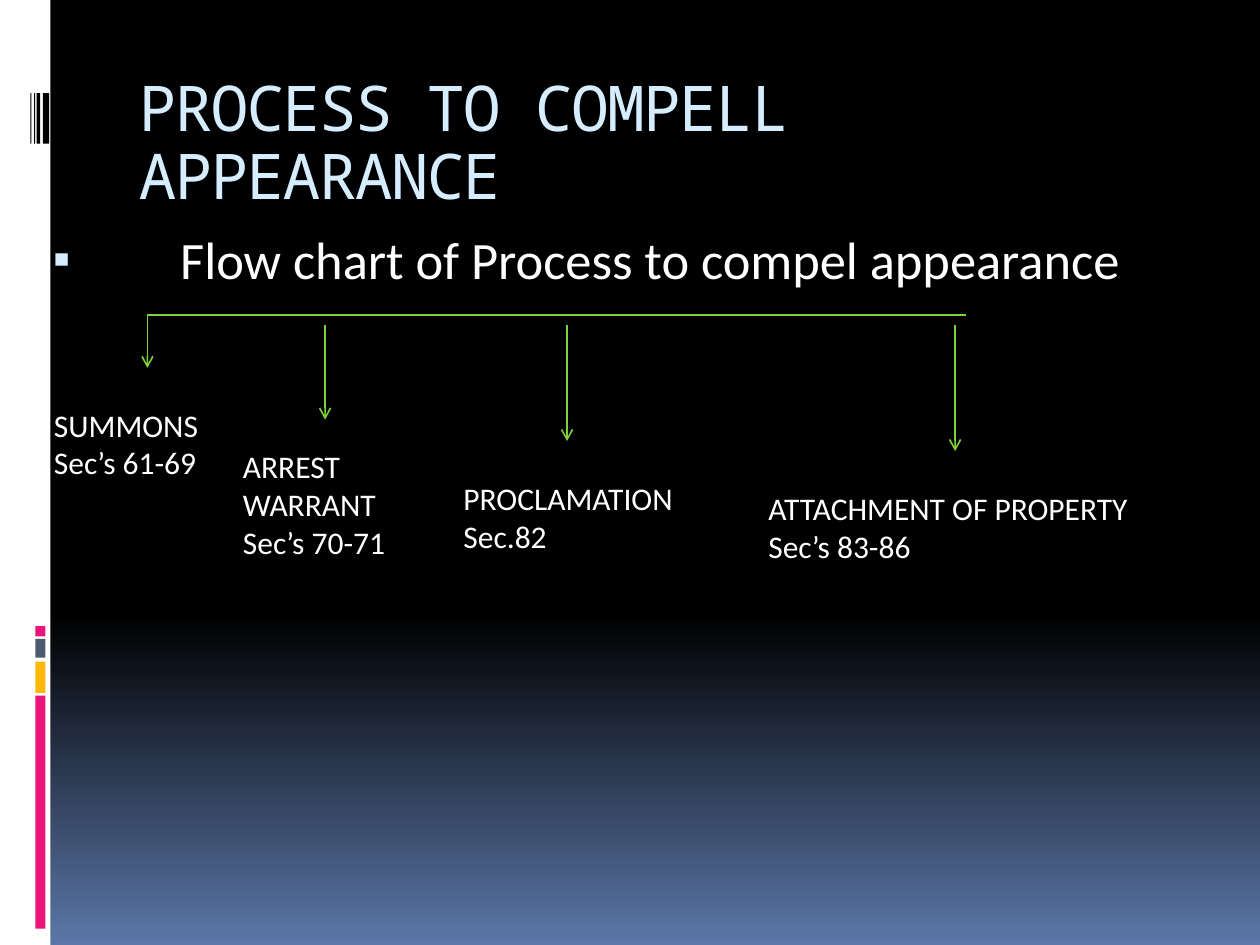
import pptx
import pptx.dml.color
import pptx.enum.shapes
import pptx.enum.text
import pptx.oxml
import pptx.oxml.ns
import pptx.util

Inches, Pt = pptx.util.Inches, pptx.util.Pt
qn = pptx.oxml.ns.qn

COLORS = {"black": "000000", "white": "FFFFFF", "sky": "D6ECFF", "blue": "5B77A8",
          "pink": "EA157A", "amber": "FEB80A", "slate": "4E5B6F", "green": "7FD13B"}
TITLE = "PROCESS TO COMPELL APPEARANCE"
HEADING = "Flow chart of Process to compel appearance"
TITLE_FORMAT = {"name": "Noto Sans Mono", "size": Pt(36), "bold": False}
HEADING_FORMAT = {"name": "Calibri", "size": Pt(30)}
LABEL_FORMAT = {"name": "Calibri", "size": Pt(18)}

# Side strip: (left, top, width, height, color)
STRIP = [(0, 0, 0.4, 7.5, "white")]
STRIP += [(0.28, top, 0.08, height, color) for top, height, color in
          [(5.52, 1.85, "pink"), (5.25, 0.25, "amber"),
           (5.07, 0.15, "slate"), (4.97, 0.08, "pink")]]
STRIP += [(left, 0.74, width, 0.4, "black") for left, width in
          [(0.34, 0.05), (0.29, 0.03), (0.27, 0.01), (0.24, 0.01)]]

# Flow chart branches: arrow (x, top, bottom), label (left, top, width, height), lines
BRANCHES = [
    ((1.17, 2.5, 2.92), (0.33, 3.17, 1.42, 0.71), ["SUMMONS", "Sec’s 61-69"]),
    ((2.58, 2.58, 3.33), (1.83, 3.5, 1.5, 1.01), ["ARREST WARRANT", "Sec’s 70-71"]),
    ((4.5, 2.58, 3.5), (3.58, 3.75, 2, 0.71), ["PROCLAMATION Sec.82"]),
    ((7.58, 2.58, 3.58), (6, 3.83, 3.25, 0.71),
     ["ATTACHMENT OF PROPERTY", "Sec’s 83-86"]),
]
RAIL = (1.17, 2.5, 7.67, 2.5)


def rgb(name):
    return pptx.dml.color.RGBColor.from_string(COLORS[name])


def place(shape, left, top, width, height):
    for name, value in {"left": left, "top": top, "width": width, "height": height}.items():
        setattr(shape, name, Inches(value))


def write(para, text, font_format, color):
    span = para.add_run()
    span.text = text
    for name, value in font_format.items():
        setattr(span.font, name, value)
    span.font.color.rgb = rgb(color)
    return span


def add_child(parent, tag, **attributes):
    child = pptx.oxml.parse_xml(f"<{tag} {pptx.oxml.ns.nsdecls('a')}/>")
    for name, value in attributes.items():
        child.set(name, value)
    parent.append(child)
    return child


def paint_background(page):
    fill = page.background.fill
    fill.gradient()
    fill.gradient_angle = 270
    for stop, (position, color) in zip(fill.gradient_stops, [(0.65, "black"), (1, "blue")]):
        stop.position = position
        stop.color.rgb = rgb(color)


def add_strip(page):
    for *bounds, color in STRIP:
        bar = page.shapes.add_shape(pptx.enum.shapes.MSO_SHAPE.RECTANGLE,
                                    *map(Inches, bounds))
        bar.shadow.inherit = False
        bar.fill.solid()
        bar.fill.fore_color.rgb = rgb(color)
        bar.line.fill.background()


def add_title(page):
    title = page.shapes.title
    place(title, 1, 0.56, 8.5, 1)
    frame = title.text_frame
    frame.word_wrap = True
    frame.margin_right = Inches(0.3)
    frame.vertical_anchor = pptx.enum.text.MSO_ANCHOR.TOP
    frame.auto_size = pptx.enum.text.MSO_AUTO_SIZE.NONE
    para = frame.paragraphs[0]
    para.alignment = pptx.enum.text.PP_ALIGN.LEFT
    para.line_spacing = 0.9
    span = write(para, TITLE, TITLE_FORMAT, "sky")
    span.font._element.set("spc", "-100")


def add_heading(page):
    body = page.placeholders[1]
    place(body, 0.25, 1.75, 9.25, 4.95)
    para = body.text_frame.paragraphs[0]
    para.space_before = Pt(7)
    write(para, HEADING, HEADING_FORMAT, "white")
    properties = para._p.get_or_add_pPr()
    properties.set("marL", str(Inches(1.08)))
    properties.set("indent", str(Inches(-1.01)))
    bullet_color = add_child(properties, "a:buClr")
    add_child(bullet_color, "a:srgbClr", val=COLORS["sky"])
    add_child(properties, "a:buSzPct", val="95000")
    add_child(properties, "a:buChar", char="▪")


def add_line(page, x1, y1, x2, y2, arrow=False):
    line = page.shapes.add_connector(pptx.enum.shapes.MSO_CONNECTOR.STRAIGHT,
                                     *map(Inches, (x1, y1, x2, y2)))
    line.line.color.rgb = rgb("green")
    line.line.width = Pt(0.94)
    if arrow:
        add_child(line.line._get_or_add_ln(), "a:tailEnd", type="arrow")
    add_child(line._element.find(qn("p:spPr")), "a:effectLst")


def add_label(page, bounds, lines):
    box = page.shapes.add_textbox(*map(Inches, bounds))
    frame = box.text_frame
    frame.word_wrap = True
    frame.auto_size = pptx.enum.text.MSO_AUTO_SIZE.SHAPE_TO_FIT_TEXT
    for index, text in enumerate(lines):
        para = frame.add_paragraph() if index else frame.paragraphs[0]
        write(para, text, LABEL_FORMAT, "white")


def main():
    deck = pptx.Presentation()
    deck.slide_width, deck.slide_height = Inches(10), Inches(7.5)
    page = deck.slides.add_slide(deck.slide_layouts[1])
    paint_background(page)
    add_strip(page)
    add_title(page)
    add_heading(page)
    add_line(page, *RAIL)
    for (x, top, bottom), bounds, lines in BRANCHES:
        add_line(page, x, top, x, bottom, arrow=True)
        add_label(page, bounds, lines)
    deck.save("out.pptx")


if __name__ == "__main__":
    main()
